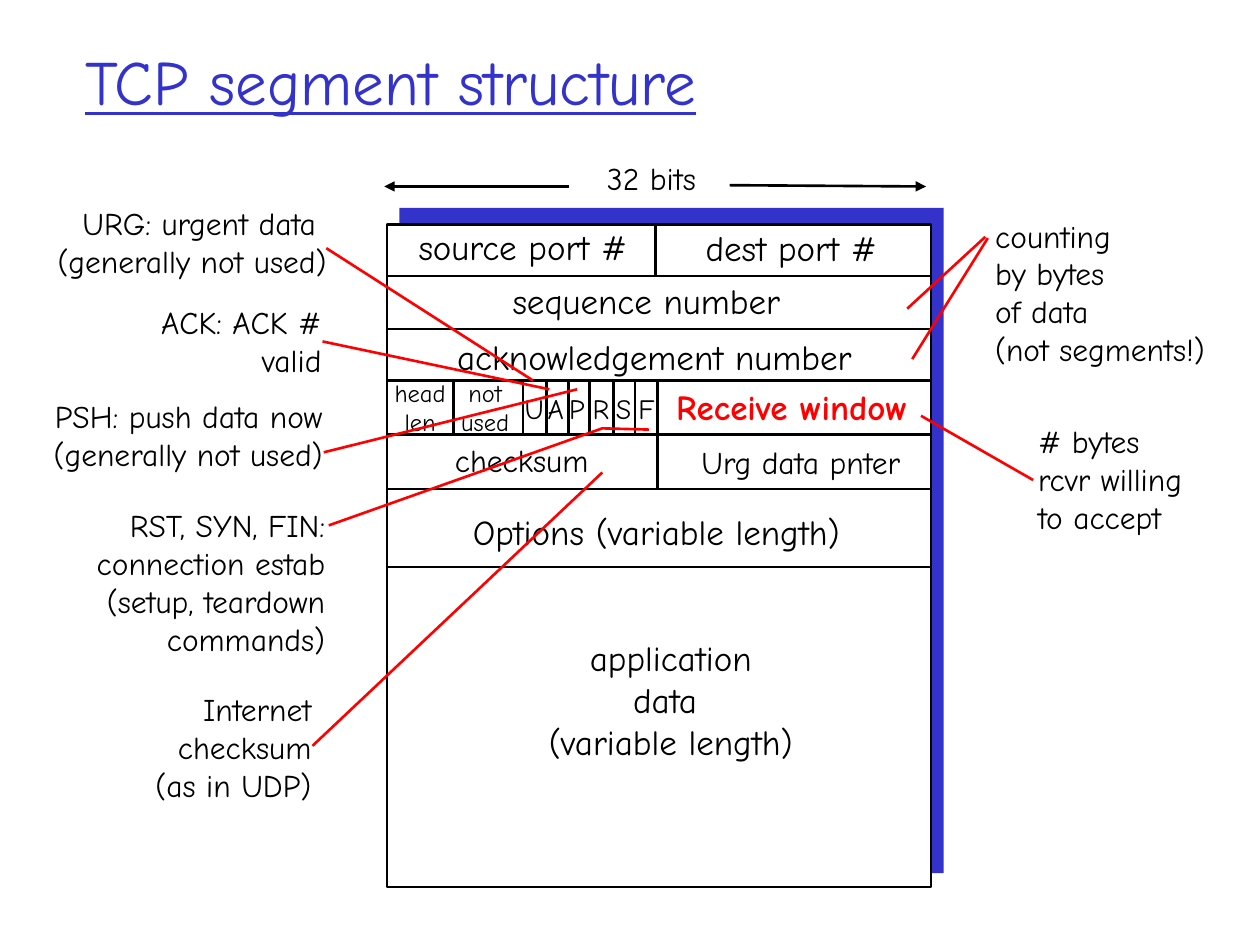
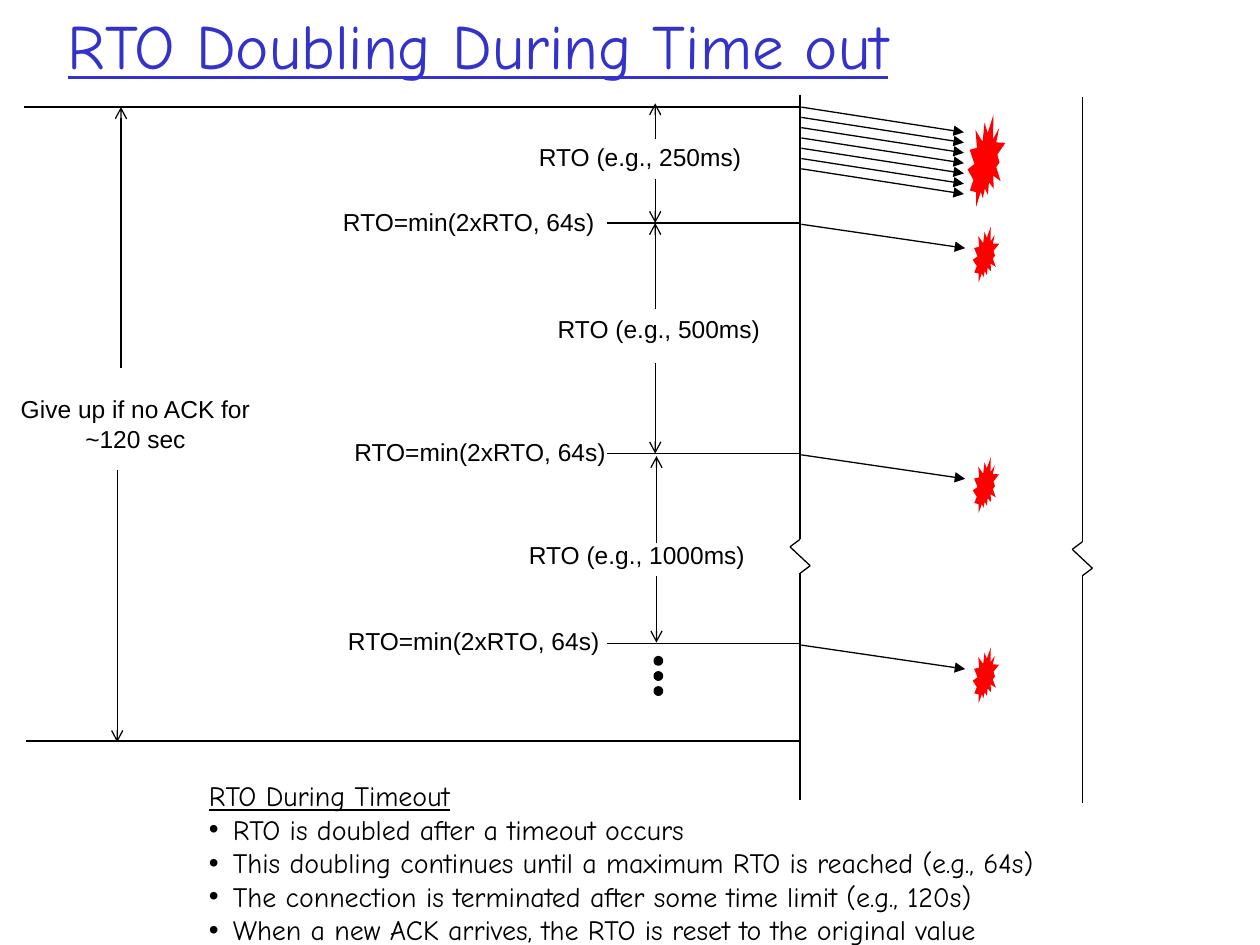
from lxml import etree
from pptx import Presentation
from pptx.dml.color import RGBColor
from pptx.enum import shapes, text
from pptx.oxml import ns
from pptx.util import Inches, Pt

COLORS = {"ink": "000000", "accent": "3333CC", "alert": "FF0000", "paper": "FFFFFF"}
HAND, SANS = "Comic Neue", "Arial"
LEFT, CENTER, RIGHT = text.PP_ALIGN.LEFT, text.PP_ALIGN.CENTER, text.PP_ALIGN.RIGHT
SHAPE = shapes.MSO_SHAPE


def rgb(name):
    return RGBColor.from_string(COLORS[name])


def add_xml(parent, tag, **attributes):
    return etree.SubElement(parent, ns.qn(tag), **attributes)


class Painter:
    def __init__(self, deck):
        self.deck = deck
        self.page = None
        self.font = HAND
        self.weight = 1.5

    def new_page(self, title, top, left, height, font, weight):
        self.page = self.deck.slides.add_slide(self.deck.slide_layouts[6])
        self.font, self.weight = font, weight
        box = self.label(left, top, 8.5, height, [title], 36, LEFT, "accent",
                         wrap=True, underline=True, font=HAND)
        box.text_frame.auto_size = text.MSO_AUTO_SIZE.NONE
        box.text_frame.vertical_anchor = text.MSO_ANCHOR.MIDDLE

    def span(self, para, words, size, color="ink", bold=False, underline=False, font=None):
        span = para.add_run()
        span.text = words
        span.font.size = Pt(size)
        span.font.name = font or self.font
        span.font.bold = bold
        span.font.underline = underline
        span.font.color.rgb = rgb(color)

    def label(self, left, top, width, height, lines, size, align=CENTER, color="ink",
              wrap=False, **style):
        box = self.page.shapes.add_textbox(
            Inches(left), Inches(top), Inches(width), Inches(height))
        frame = box.text_frame
        frame.word_wrap = wrap
        frame.auto_size = text.MSO_AUTO_SIZE.SHAPE_TO_FIT_TEXT
        for index, words in enumerate(lines):
            para = frame.add_paragraph() if index else frame.paragraphs[0]
            para.alignment = align
            self.span(para, words, size, color, **style)
        return box

    def bullets(self, box, lines, size, font):
        for words in lines:
            para = box.text_frame.add_paragraph()
            self.span(para, words, size, font=font)
            properties = para._p.get_or_add_pPr()
            indent = Inches(0.19)
            properties.set("marL", str(indent))
            properties.set("indent", str(-indent))
            add_xml(properties, "a:buFont", typeface=SANS)
            add_xml(properties, "a:buChar", char="•")

    def line(self, x1, y1, x2, y2, color="ink", head=None):
        line = self.page.shapes.add_connector(
            shapes.MSO_CONNECTOR.STRAIGHT, Inches(x1), Inches(y1), Inches(x2), Inches(y2))
        line.line.color.rgb = rgb(color)
        line.line.width = Pt(self.weight)
        properties = line._element.spPr
        if head:
            add_xml(properties.get_or_add_ln(), "a:tailEnd", type=head)
        add_xml(properties, "a:effectLst")

    def shape(self, kind, left, top, width, height, fill, outline=None):
        shape = self.page.shapes.add_shape(
            kind, Inches(left), Inches(top), Inches(width), Inches(height))
        shape.shadow.inherit = False
        shape.fill.solid()
        shape.fill.fore_color.rgb = rgb(fill)
        if outline:
            shape.line.color.rgb = rgb("ink")
            shape.line.width = Pt(outline)
        else:
            shape.line.fill.background()

    def bent_line(self, points, color):
        corners = [(Inches(x), Inches(y)) for x, y in points]
        builder = self.page.shapes.build_freeform(*corners[0])
        builder.add_line_segments(corners[1:], close=False)
        bend = builder.convert_to_shape()
        bend.shadow.inherit = False
        bend.fill.background()
        bend.line.color.rgb = rgb(color)
        bend.line.width = Pt(self.weight)


def segment_page(art):
    art.new_page("TCP segment structure", 0.21, 0.58, 0.85, HAND, 1.5)
    art.shape(SHAPE.RECTANGLE, 3.17, 1.65, 4.32, 5.28, "accent")
    art.shape(SHAPE.RECTANGLE, 3.07, 1.78, 4.32, 5.26, "paper", 1.5)

    for row in (2.19, 2.61, 3.02, 3.45, 3.88, 4.5):
        art.line(3.07, row, 7.39, row)
    art.line(5.2, 1.78, 5.2, 2.2)
    art.line(5.22, 3.02, 5.22, 3.88)
    for column in (3.6, 4.15, 4.34, 4.51, 4.68, 4.87, 5.04):
        art.line(column, 3.02, column, 3.45)

    art.line(5.79, 1.47, 7.35, 1.48, head="triangle")
    art.line(4.52, 1.48, 3.05, 1.48, head="triangle")

    fields = [
        (4.65, 1.21, 1.04, 18, "32 bits"),
        (3.14, 1.74, 2.02, 20, "source port #"),
        (5.41, 1.75, 1.74, 20, "dest port #"),
        (3.77, 2.17, 2.72, 20, "sequence number"),
        (3.33, 2.61, 3.73, 20, "acknowledgement number"),
        (5.38, 3.47, 1.95, 18, "Urg data pnter"),
        (3.48, 3.45, 1.32, 18, "checksum"),
        (3.5, 4, 3.42, 20, "Options (variable length)"),
    ]
    for left, top, width, size, words in fields:
        art.label(left, top, width, 0.4 if size == 18 else 0.43, [words], size)
    art.label(5.17, 3.01, 2.23, 0.43, ["Receive window"], 20, color="alert", bold=True)
    art.label(4.16, 5, 2.33, 1.1, ["application", "data ", "(variable length)"], 20)
    art.label(3.02, 2.95, 0.63, 0.57, ["head", "len"], 14)
    art.label(3.54, 2.95, 0.62, 0.57, ["not", "used"], 14)
    for flag, middle in zip("UAPRSF", (4.24, 4.41, 4.58, 4.77, 4.95, 5.13)):
        art.label(middle - 0.18, 3.06, 0.36, 0.37, [flag], 16)

    notes = [
        (0.19, 1.57, 2.5, RIGHT, ["URG: urgent data ", "(generally not used)"]),
        (1.04, 2.36, 1.61, RIGHT, ["ACK: ACK #", "valid"]),
        (0.16, 3.1, 2.5, RIGHT, ["PSH: push data now", "(generally not used)"]),
        (0.52, 3.97, 2.16, RIGHT,
         ["RST, SYN, FIN:", "connection estab", "(setup, teardown", "commands)"]),
        (1.09, 5.43, 1.48, RIGHT, ["Internet", "checksum", "(as in UDP)"]),
        (8.14, 3.3, 1.47, LEFT, ["# bytes", "rcvr willing", "to accept"]),
        (7.8, 1.67, 1.99, LEFT, ["counting", "by bytes", "of data", "(not segments!)"]),
    ]
    for left, top, width, align, lines in notes:
        art.label(left, top, width, 0.1 + 0.3 * len(lines), lines, 18, align)

    pointers = [
        (2.59, 1.97, 4.23, 3.02), (2.56, 2.71, 4.36, 3.09), (2.57, 3.59, 4.58, 3.09),
        (2.48, 5.92, 4.78, 3.75), (8.2, 3.81, 7.31, 3.3),
        (7.84, 1.89, 7.24, 2.85), (7.82, 1.88, 7.2, 2.45),
    ]
    for pointer in pointers:
        art.line(*pointer, color="alert")
    art.bent_line([(2.61, 4.17), (4.78, 3.4), (5.15, 3.41)], "alert")


def timeout_page(art):
    art.new_page("RTO Doubling During Time out", 0, 0.44, 0.7, SANS, 0.75)

    for axis, top in ((6.35, 0.75), (8.59, 0.77)):
        zigzag = [(axis, top), (axis, top + 3.53), (axis - 0.08, top + 3.59),
                  (axis + 0.08, top + 3.74), (axis, top + 3.8), (axis, top + 5.6)]
        for start, end in zip(zigzag, zigzag[1:]):
            art.line(*start, *end)

    for packet in range(7):
        top = 0.85 + packet * 0.49 / 6
        art.line(6.36, top, 7.65, top + 0.2, head="triangle")
    art.shape(SHAPE.EXPLOSION2, 7.68, 0.91, 0.3, 0.73, "alert")

    for level, label_left, label_top in ((1.77, 2.59, 1.59), (3.6, 2.68, 3.42), (5.11, 2.63, 4.92)):
        art.line(6.34, level, 4.82, level)
        art.label(label_left, label_top, 2.26, 0.34, ["RTO=min(2xRTO, 64s)"], 14)
        art.line(6.36, level + 0.01, 7.66, level + 0.2, head="triangle")
        art.shape(SHAPE.EXPLOSION2, 7.72, level + 0.03, 0.21, 0.44, "alert")

    waits = [
        (4.16, 1.08, 1.84, "250ms", 5.2, (1.1, 0.82), (1.42, 1.77)),
        (4.31, 2.44, 1.84, "500ms", 5.2, (2.45, 1.77), (2.88, 3.6)),
        (4.09, 4.24, 1.93, "1000ms", 5.21, (4.31, 3.62), (4.57, 5.1)),
    ]
    for left, top, width, delay, axis, *arrows in waits:
        art.label(left, top, width, 0.34, [f"RTO (e.g., {delay})"], 14)
        for start, end in arrows:
            art.line(axis, start, axis, end, head="arrow")

    for dot in range(3):
        art.shape(SHAPE.OVAL, 5.2, 5.22 + dot * 0.12, 0.05, 0.05, "ink", 2)

    art.label(0, 3.08, 2.15, 0.57, ["Give up if no ACK for ~120 sec"], 14, wrap=True)
    art.line(6.34, 0.85, 0.19, 0.85)
    art.line(6.35, 5.88, 0.21, 5.88)
    art.line(0.96, 2.92, 0.96, 0.85, head="arrow")
    art.line(0.93, 3.73, 0.93, 5.89, head="arrow")

    summary = art.label(1.56, 6.13, 7.34, 1.45, ["RTO During Timeout"], 16, LEFT,
                        underline=True, font=HAND)
    art.bullets(summary, [
        "RTO is doubled after a timeout occurs",
        "This doubling continues until a maximum RTO is reached (e.g., 64s)",
        "The connection is terminated after some time limit (e.g., 120s)",
        "When a new ACK arrives, the RTO is reset to the original value",
    ], 16, HAND)


def main():
    deck = Presentation()
    deck.slide_width, deck.slide_height = Inches(10), Inches(7.5)
    art = Painter(deck)
    segment_page(art)
    timeout_page(art)
    deck.save("out.pptx")


if __name__ == "__main__":
    main()
